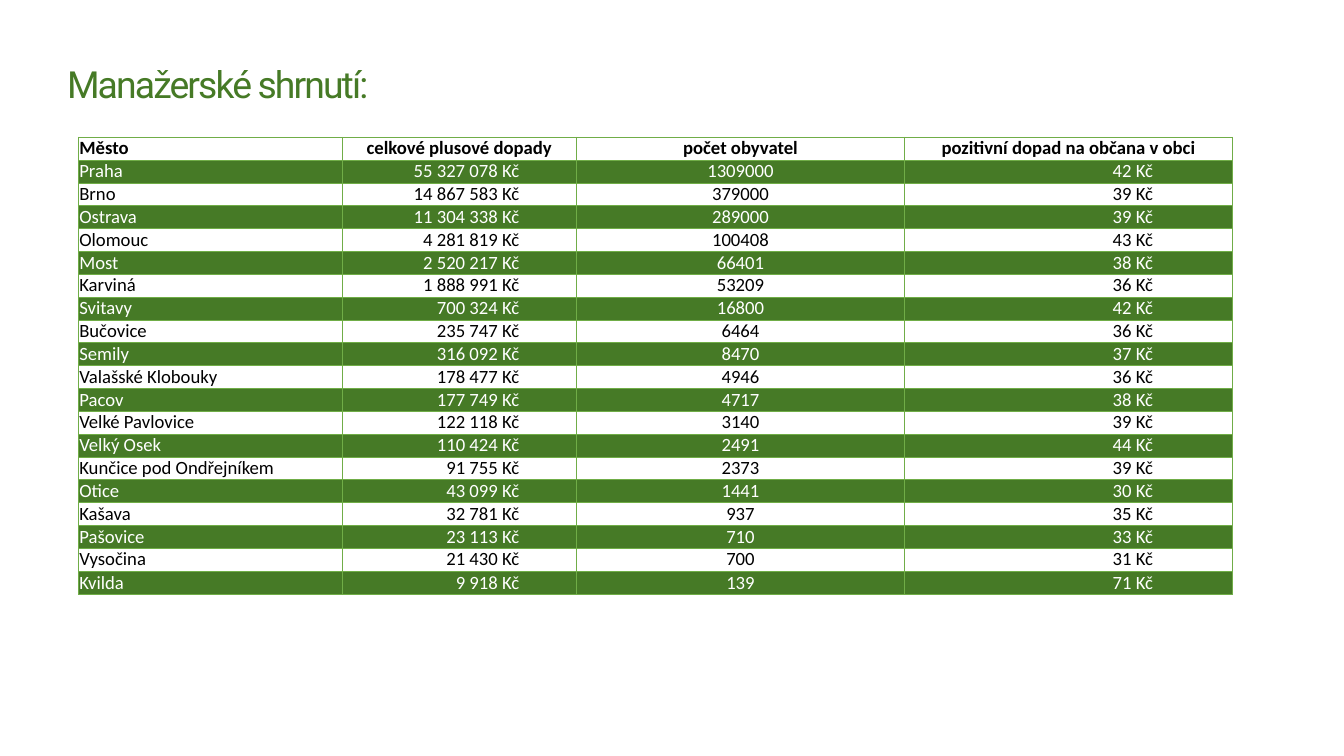
import lxml.etree
import pptx
import pptx.dml.color
import pptx.enum.text
import pptx.oxml.ns
import pptx.util

GREEN = pptx.dml.color.RGBColor(0x46, 0x7A, 0x26)
BORDER = pptx.dml.color.RGBColor(0x70, 0xAD, 0x47)
BLACK = pptx.dml.color.RGBColor(0, 0, 0)
WHITE = pptx.dml.color.RGBColor(255, 255, 255)

LEFT = pptx.enum.text.PP_ALIGN.LEFT
CENTER = pptx.enum.text.PP_ALIGN.CENTER
RIGHT = pptx.enum.text.PP_ALIGN.RIGHT

PX_PER_INCH = 100

HEADER = ("Město", "celkové plusové dopady", "počet obyvatel", "pozitivní dopad na občana v obci")
COLUMN_WIDTHS = (392, 349, 488, 488)
COLUMN_ALIGNS = (LEFT, RIGHT, CENTER, RIGHT)
RIGHT_MARGINS = (1, 85, 1, 118)
CITIES = (
    ("Praha", "55 327 078", 1309000, 42),
    ("Brno", "14 867 583", 379000, 39),
    ("Ostrava", "11 304 338", 289000, 39),
    ("Olomouc", "4 281 819", 100408, 43),
    ("Most", "2 520 217", 66401, 38),
    ("Karviná", "1 888 991", 53209, 36),
    ("Svitavy", "700 324", 16800, 42),
    ("Bučovice", "235 747", 6464, 36),
    ("Semily", "316 092", 8470, 37),
    ("Valašské Klobouky", "178 477", 4946, 36),
    ("Pacov", "177 749", 4717, 38),
    ("Velké Pavlovice", "122 118", 3140, 39),
    ("Velký Osek", "110 424", 2491, 44),
    ("Kunčice pod Ondřejníkem", "91 755", 2373, 39),
    ("Otice", "43 099", 1441, 30),
    ("Kašava", "32 781", 937, 35),
    ("Pašovice", "23 113", 710, 33),
    ("Vysočina", "21 430", 700, 31),
    ("Kvilda", "9 918", 139, 71),
)


def px(length):
    return pptx.util.Inches(length / PX_PER_INCH)


class SlideBuilder:
    title_font = "Roboto"
    table_font = "Calibri"

    def __init__(self, slide):
        self.slide = slide

    def title(self, text, left, top, width, height):
        box = self.slide.shapes.add_textbox(px(left), px(top), px(width), px(height))
        box.text_frame.word_wrap = True
        para = box.text_frame.paragraphs[0]
        span = para.add_run()
        span.text = text
        self.style_font(para.font, self.title_font, 40, GREEN)
        span.font._element.set("spc", "-200")

    def table(self, rows, left, top, row_height, last_height):
        height = row_height * (len(rows) - 1) + last_height
        frame = self.slide.shapes.add_table(
            len(rows), len(COLUMN_WIDTHS), px(left), px(top), px(sum(COLUMN_WIDTHS)), px(height)
        )
        table = frame.table
        table.first_row = False
        table.horz_banding = False
        for column, width in zip(table.columns, COLUMN_WIDTHS):
            column.width = px(width)
        for row in table.rows:
            row.height = px(row_height)
        table.rows[len(rows) - 1].height = px(last_height)
        for row_index, values in enumerate(rows):
            for column_index, value in enumerate(values):
                self.cell(table.cell(row_index, column_index), value, row_index, column_index)

    def cell(self, cell, text, row_index, column_index):
        is_header = row_index == 0
        is_green = row_index % 2 == 1
        cell.vertical_anchor = pptx.enum.text.MSO_ANCHOR.BOTTOM
        cell.margin_left = px(1)
        cell.margin_right = px(1 if is_header else RIGHT_MARGINS[column_index])
        cell.margin_top = cell.margin_bottom = 0
        if is_green:
            cell.fill.solid()
            cell.fill.fore_color.rgb = GREEN
        else:
            cell.fill.background()
        self.cell_borders(cell)
        para = cell.text_frame.paragraphs[0]
        para.text = text
        para.alignment = CENTER if is_header and column_index else COLUMN_ALIGNS[column_index]
        self.style_font(para.font, self.table_font, 20, WHITE if is_green else BLACK, is_header)

    def cell_borders(self, cell):
        properties = cell._tc.get_or_add_tcPr()
        for position, side in enumerate(("lnL", "lnR", "lnT", "lnB")):
            line = lxml.etree.Element(pptx.oxml.ns.qn(f"a:{side}"), w=str(pptx.util.Pt(0.5)))
            fill = lxml.etree.SubElement(line, pptx.oxml.ns.qn("a:solidFill"))
            lxml.etree.SubElement(fill, pptx.oxml.ns.qn("a:srgbClr"), val=str(BORDER))
            properties.insert(position, line)

    def style_font(self, font, name, size, color, bold=False):
        font.name = name
        font.size = pptx.util.Pt(size)
        font.bold = bold
        font.color.rgb = color


def main():
    deck = pptx.Presentation()
    deck.slide_width = px(2000)
    deck.slide_height = px(1125)
    page = SlideBuilder(deck.slides.add_slide(deck.slide_layouts[6]))
    page.title("Manažerské shrnutí:", 90, 86, 1627, 77)
    rows = [HEADER] + [
        (city, f"{total} Kč", str(population), f"{per_person} Kč")
        for city, total, population, per_person in CITIES
    ]
    page.table(rows, 117, 204, 34, 35)
    deck.save("out.pptx")


if __name__ == "__main__":
    main()
